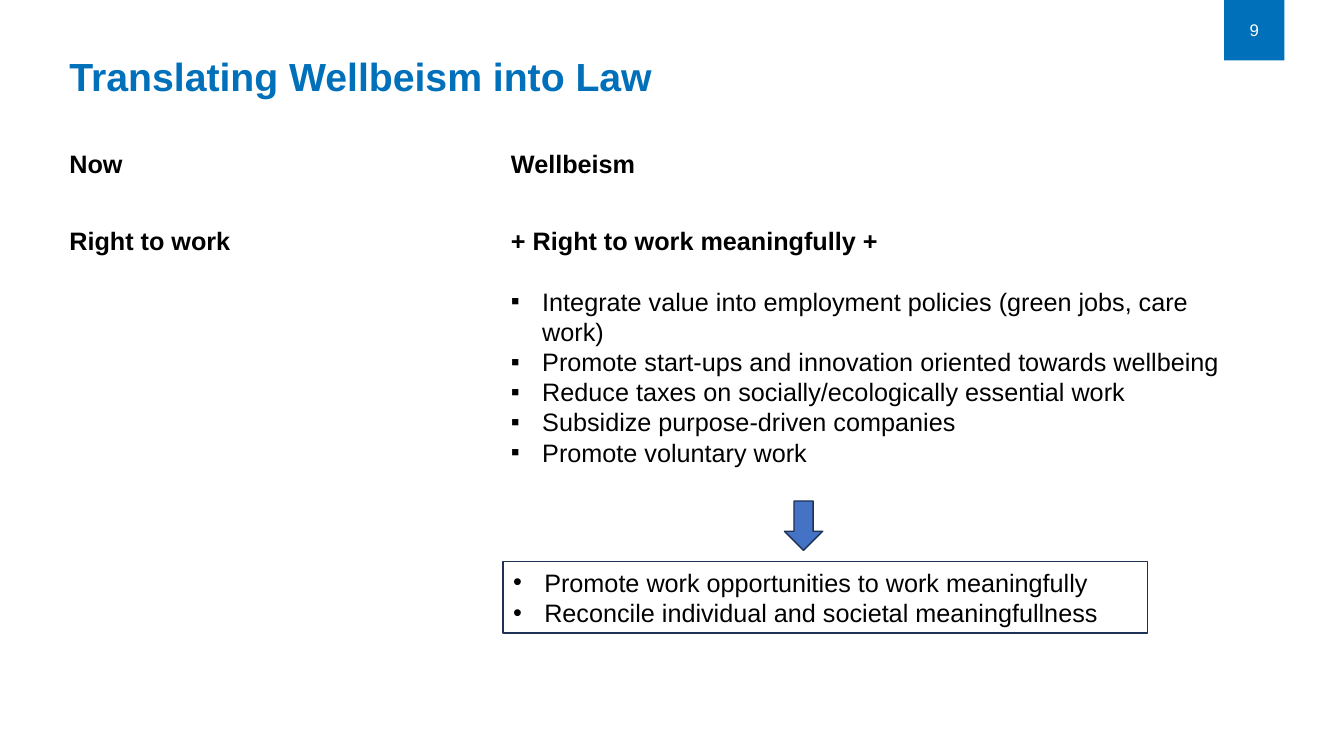
from dataclasses import dataclass

from lxml import etree
from pptx import Presentation
from pptx.dml.color import RGBColor
from pptx.enum.shapes import MSO_SHAPE
from pptx.enum.text import MSO_ANCHOR, PP_ALIGN
from pptx.oxml.ns import qn
from pptx.util import Inches, Pt

RECTANGLE = MSO_SHAPE.RECTANGLE
DOWN_ARROW = MSO_SHAPE.DOWN_ARROW
TOP = MSO_ANCHOR.TOP
MIDDLE = MSO_ANCHOR.MIDDLE
LEFT = PP_ALIGN.LEFT
CENTER = PP_ALIGN.CENTER


@dataclass(frozen=True)
class Theme:
    font: str = "Arial"
    brand: RGBColor = RGBColor(0x00, 0x70, 0xBA)
    arrow: RGBColor = RGBColor(0x44, 0x72, 0xC4)
    outline: RGBColor = RGBColor(0x1E, 0x32, 0x56)
    text: RGBColor = RGBColor(0x00, 0x00, 0x00)
    inverse: RGBColor = RGBColor(0xFF, 0xFF, 0xFF)
    title_size: float = 28
    body_size: float = 18
    number_size: float = 12
    section_gap: float = 33.6
    list_gap: float = 21.6


THEME = Theme()


def add_bullet(paragraph, character):
    properties = paragraph._p.get_or_add_pPr()
    indent = Inches(0.31)
    properties.set("marL", str(indent))
    properties.set("indent", str(-indent))
    etree.SubElement(properties, qn("a:buFont"), typeface=THEME.font)
    etree.SubElement(properties, qn("a:buChar"), char=character)


def write_paragraph(frame, text, size=THEME.body_size, color=THEME.text, bold=False,
                    bullet=None, space_before=0, align=LEFT):
    first = frame.paragraphs[0]
    paragraph = frame.add_paragraph() if first.runs else first
    if bullet:
        add_bullet(paragraph, bullet)
    paragraph.alignment = align
    if space_before:
        paragraph.space_before = Pt(space_before)
    run = paragraph.add_run()
    run.text = text
    run.font.name = THEME.font
    run.font.size = Pt(size)
    run.font.bold = bold
    run.font.color.rgb = color
    return paragraph


def add_text_frame(slide, box):
    frame = slide.shapes.add_textbox(*map(Inches, box)).text_frame
    frame.word_wrap = True
    frame.vertical_anchor = TOP
    return frame


def add_plain_shape(slide, kind, box, fill=None, line_width=0):
    shape = slide.shapes.add_shape(kind, *map(Inches, box))
    shape.shadow.inherit = False
    if fill is None:
        shape.fill.background()
    else:
        shape.fill.solid()
        shape.fill.fore_color.rgb = fill
    if line_width:
        shape.line.color.rgb = THEME.outline
        shape.line.width = Pt(line_width)
    else:
        shape.line.fill.background()
    shape.text_frame.word_wrap = True
    shape.text_frame.vertical_anchor = MIDDLE
    return shape


def add_page_number(slide, box, number):
    square = add_plain_shape(slide, RECTANGLE, box, THEME.brand)
    write_paragraph(square.text_frame, number, THEME.number_size, THEME.inverse, align=CENTER)


def add_title(slide, box, text):
    paragraph = write_paragraph(add_text_frame(slide, box), text, THEME.title_size,
                                THEME.brand, bold=True)
    paragraph.line_spacing = 0.9


def add_column(slide, box, heading, right, measures=()):
    frame = add_text_frame(slide, box)
    write_paragraph(frame, heading, bold=True)
    write_paragraph(frame, right, bold=True, space_before=THEME.section_gap)
    for index, measure in enumerate(measures):
        write_paragraph(frame, measure, bullet="▪",
                        space_before=0 if index else THEME.list_gap)


def add_outcome(slide, box, goals):
    left, top, width, height = box
    arrow_box = (left + 2.79, top, 0.38, 0.49)
    add_plain_shape(slide, DOWN_ARROW, arrow_box, THEME.arrow, 1)
    goals_box = (left, top + 0.6, width, height - 0.6)
    frame = add_plain_shape(slide, RECTANGLE, goals_box, line_width=1.25).text_frame
    for goal in goals:
        write_paragraph(frame, goal, bullet="•")


def main():
    presentation = Presentation()
    presentation.slide_width = Inches(13.33)
    presentation.slide_height = Inches(7.5)
    slide = presentation.slides.add_slide(presentation.slide_layouts[6])

    add_page_number(slide, (12.14, 0, 0.6, 0.6), "9")
    add_title(slide, (0.59, 0.52, 11.55, 0.76), "Translating Wellbeism into Law")
    add_column(slide, (0.59, 1.42, 3.34, 1.78), "Now", "Right to work")
    add_column(slide, (4.97, 1.42, 7.33, 3.3), "Wellbeism", "+ Right to work meaningfully +", [
        "Integrate value into employment policies (green jobs, care work)",
        "Promote start-ups and innovation oriented towards wellbeing",
        "Reduce taxes on socially/ecologically essential work",
        "Subsidize purpose-driven companies",
        "Promote voluntary work",
    ])
    add_outcome(slide, (4.99, 4.97, 6.39, 1.31), [
        "Promote work opportunities to work meaningfully",
        "Reconcile individual and societal meaningfullness",
    ])
    presentation.save("out.pptx")


if __name__ == "__main__":
    main()
